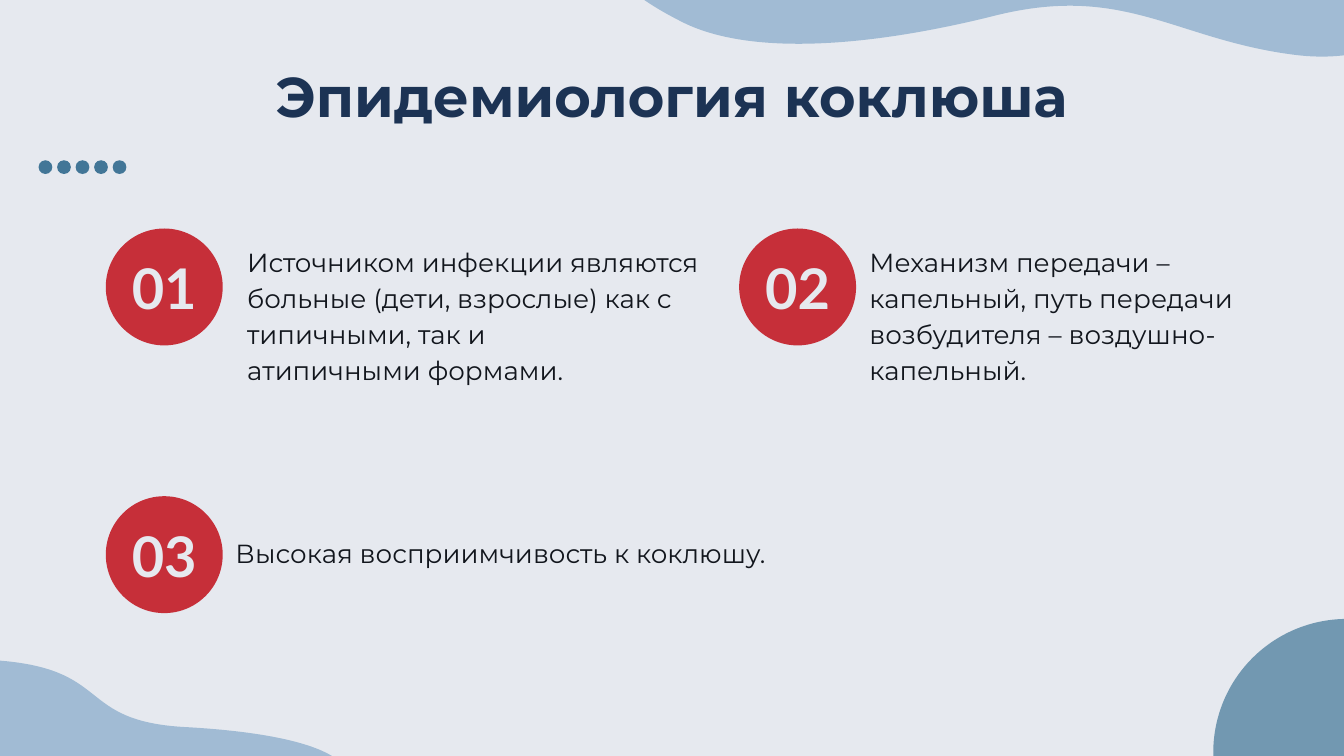
from dataclasses import dataclass

from lxml.etree import SubElement
from pptx import Presentation
from pptx.dml.color import RGBColor
from pptx.enum.shapes import MSO_SHAPE as Shape
from pptx.enum.text import MSO_ANCHOR as Anchor, MSO_AUTO_SIZE as AutoSize, PP_ALIGN as Align
from pptx.oxml.ns import qn
from pptx.util import Cm, Pt


@dataclass(frozen=True)
class Theme:
    background: str = "E6E9EF"
    wave: str = "A1BBD4"
    accent: str = "427697"
    badge: str = "C62F39"
    heading: str = "1C3354"
    body: str = "12161D"
    text_font: str = "Montserrat"
    number_font: str = "Lato"
    heading_size: int = 30
    body_size: int = 14


THEME = Theme()
COMPARISON_LAYOUT = 4
BADGE_SIZE = 2.21
NUMBER_HEIGHT = 1.22

# Each wave: a start point, then Bezier segments (two controls and an end), in cm
BOTTOM_WAVE = (-1.73, 13.79), [
    [(-1.73, 13.79), (-1.83, 12.29), (0.13, 12.5)],
    [(2.08, 12.7), (1.5, 13.61), (3.43, 13.74)],
    [(5.36, 13.84), (6.5, 14.17), (6.58, 14.66)],
    [(6.68, 15.14), (-1.52, 14.99), (-1.52, 14.99)],
]
TOP_WAVE = (27.89, -0.41), [
    [(27.89, -0.41), (26.75, 1.32), (24.49, 1.04)],
    [(22.23, 0.76), (21.29, -0.3), (18.87, 0.28)],
    [(16.46, 0.89), (14.17, 1.07), (12.88, 0.41)],
    [(11.58, -0.25), (11.68, -0.58), (11.68, -0.58)],
]

# Number, badge position, text box, text
FACTS = [
    ("01", (2, 4.32), (4.42, 4.32, 9.14, 4.42),
     "Источником инфекции являются больные (дети, взрослые) как с типичными, так и\n"
     "атипичными формами."),
    ("02", (13.97, 4.32), (16.18, 4.32, 8.97, 4.32),
     "Механизм передачи – капельный, путь передачи возбудителя – воздушно-капельный."),
    ("03", (2, 9.38), (4.2, 9.82, 13.69, 3.81),
     "Высокая восприимчивость к коклюшу."),
]


def paint(shape, color):
    shape.shadow.inherit = False
    shape.fill.solid()
    shape.fill.fore_color.rgb = RGBColor.from_string(color)
    shape.line.fill.background()


def add_circle(slide, left, top, size, color):
    circle = slide.shapes.add_shape(Shape.OVAL, Cm(left), Cm(top), Cm(size), Cm(size))
    paint(circle, color)
    return circle


def add_wave(slide, start, segments):
    builder = slide.shapes.build_freeform(Cm(start[0]), Cm(start[1]))
    builder.add_line_segments([(Cm(x), Cm(y)) for *_, (x, y) in segments], close=True)
    wave = builder.convert_to_shape()
    paint(wave, THEME.wave)

    # Turn each straight segment into a Bezier curve
    lines = list(wave.element.iter(qn("a:lnTo")))
    for line, points in zip(lines, segments):
        curve = line.getparent().makeelement(qn("a:cubicBezTo"))
        for x, y in points:
            SubElement(curve, qn("a:pt"), x=str(Cm(x) - wave.left), y=str(Cm(y) - wave.top))
        line.getparent().replace(line, curve)


def format_text(frame, font, size, color, bold, align, anchor):
    frame.word_wrap = True
    frame.auto_size = AutoSize.NONE
    frame.vertical_anchor = anchor
    frame.margin_left = frame.margin_right = Cm(0.25)
    frame.margin_top = frame.margin_bottom = Cm(0.25)
    for paragraph in frame.paragraphs:
        paragraph.alignment = align
        paragraph.space_before = Pt(0)
        for run in paragraph.runs:
            run.font.name = font
            run.font.size = Pt(size)
            run.font.bold = bold
            run.font.color.rgb = RGBColor.from_string(color)


def place(placeholder, left, top, width, height):
    placeholder.left, placeholder.top = Cm(left), Cm(top)
    placeholder.width, placeholder.height = Cm(width), Cm(height)


def fill_title(title, text):
    place(title, 2, 0.91, 21.4, 1.6)
    title.text_frame.text = text
    format_text(title.text_frame, THEME.text_font, THEME.heading_size, THEME.heading,
                True, Align.CENTER, Anchor.TOP)


def fill_fact(body, box, text):
    place(body, *box)
    body.text_frame.text = text
    format_text(body.text_frame, THEME.text_font, THEME.body_size, THEME.body,
                False, Align.LEFT, Anchor.TOP)
    for paragraph in body.text_frame.paragraphs:
        paragraph.line_spacing = 1.15
        properties = paragraph._p.get_or_add_pPr()
        properties.set("marL", "0")
        properties.set("indent", "0")
        SubElement(properties, qn("a:buNone"))


def add_badge(slide, left, top, number):
    add_circle(slide, left, top, BADGE_SIZE, THEME.badge)
    number_top = top + (BADGE_SIZE - NUMBER_HEIGHT) / 2
    label = slide.shapes.add_textbox(Cm(left), Cm(number_top), Cm(BADGE_SIZE), Cm(NUMBER_HEIGHT))
    label.text_frame.text = number
    format_text(label.text_frame, THEME.number_font, THEME.heading_size, THEME.background,
                True, Align.CENTER, Anchor.MIDDLE)


def add_decoration(slide):
    # Row of dots
    for index in range(5):
        add_circle(slide, 0.73 + 0.35 * index, 3.03, 0.26, THEME.accent)
    # Waves and translucent corner circle
    for wave in (BOTTOM_WAVE, TOP_WAVE):
        add_wave(slide, *wave)
    corner = add_circle(slide, 22.93, 11.7, 5.05, THEME.accent)
    color = corner.fill._xPr.find(qn("a:solidFill"))[0]
    SubElement(color, qn("a:alpha"), val="70000")


def main():
    presentation = Presentation()
    presentation.slide_width, presentation.slide_height = Cm(25.4), Cm(14.29)
    slide = presentation.slides.add_slide(presentation.slide_layouts[COMPARISON_LAYOUT])
    slide.background.fill.solid()
    slide.background.fill.fore_color.rgb = RGBColor.from_string(THEME.background)

    add_decoration(slide)
    fill_title(slide.shapes.title, "Эпидемиология коклюша")

    # Numbered facts
    bodies = list(slide.placeholders)[1:]
    for body, (number, position, box, text) in zip(bodies, FACTS):
        add_badge(slide, *position, number)
        fill_fact(body, box, text)

    # Unused placeholders of the layout
    for spare in bodies[len(FACTS):]:
        spare.element.getparent().remove(spare.element)

    presentation.save("out.pptx")


if __name__ == "__main__":
    main()
